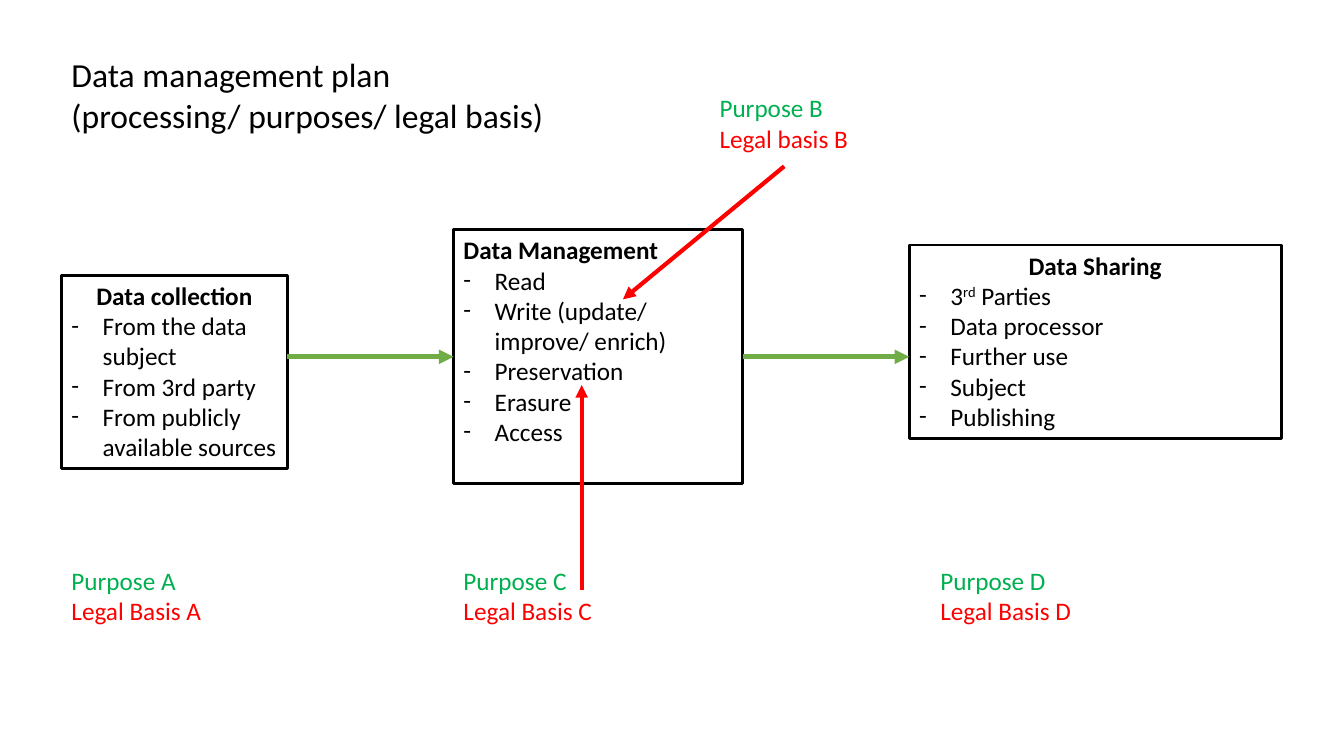
from lxml.etree import SubElement
from pptx import Presentation
from pptx.dml.color import RGBColor
from pptx.enum.shapes import MSO_CONNECTOR, MSO_SHAPE
from pptx.enum.text import MSO_ANCHOR, MSO_AUTO_SIZE, PP_ALIGN
from pptx.oxml.ns import qn
from pptx.util import Inches, Pt

BLACK, GREEN, RED, FLOW_GREEN = "000000", "00B050", "FF0000", "70AD47"

deck = Presentation()
deck.slide_width, deck.slide_height = Inches(13.33), Inches(7.5)
slide = deck.slides.add_slide(deck.slide_layouts[6])

# Grid of 100 columns by 100 rows
COL, ROW = deck.slide_width / 100, deck.slide_height / 100
MIDLINE = 47.2
LEFT, CENTRE, RIGHT = 4.58, 33.75, 67.65


def paint(color_format, value):
    color_format.rgb = RGBColor.from_string(value)


def write(frame, text, size=18, color=BLACK, bold=False, align=PP_ALIGN.LEFT, dash=False):
    """Add a paragraph; text between ^ marks is superscript, \\v breaks a line."""
    frame.word_wrap = True
    frame.auto_size = MSO_AUTO_SIZE.SHAPE_TO_FIT_TEXT
    frame.vertical_anchor = MSO_ANCHOR.TOP
    paragraph = frame.add_paragraph() if frame.text else frame.paragraphs[0]
    paragraph.alignment = align
    if dash:
        properties = paragraph._p.get_or_add_pPr()
        properties.set("marL", str(Inches(0.31)))
        properties.set("indent", str(-Inches(0.31)))
        SubElement(properties, qn("a:buFont"), typeface="Calibri")
        SubElement(properties, qn("a:buChar"), char="-")
    for line_number, line in enumerate(text.split("\v")):
        if line_number:
            paragraph.add_line_break()
        for part_number, part in enumerate(line.split("^")):
            run = paragraph.add_run()
            run.text = part
            run.font.name, run.font.size, run.font.bold = "Calibri", Pt(size), bold
            paint(run.font.color, color)
            if part_number % 2:
                run._r.get_or_add_rPr().set("baseline", "30000")


title = slide.shapes.add_textbox(LEFT * COL, 6.53 * ROW, 38.1 * COL, 12.13 * ROW)
write(title.text_frame, "Data management plan\v(processing/ purposes/ legal basis)", size=24)

# Stages: left, width, height, shift of the centre from the midline
stages = [
    (LEFT, 16.8, 25.6, 2, "Data collection", PP_ALIGN.CENTER,
     ["From the data subject", "From 3rd party", "From publicly available sources"]),
    (CENTRE, 21.53, 33.6, 0, "Data Management", PP_ALIGN.LEFT,
     ["Read", "Write (update/ improve/ enrich)", "Preservation", "Erasure", "Access"]),
    (RIGHT, 27.68, 25.6, -2, "Data Sharing", PP_ALIGN.CENTER,
     ["3^rd^ Parties", "Data processor", "Further use", "Subject", "Publishing"]),
]
for left, width, height, shift, heading, align, activities in stages:
    top = MIDLINE + shift - height / 2
    stage = slide.shapes.add_shape(
        MSO_SHAPE.RECTANGLE, left * COL, top * ROW, width * COL, height * ROW)
    stage.shadow.inherit = False
    stage.fill.background()
    paint(stage.line.color, BLACK)
    stage.line.width = Pt(2)
    write(stage.text_frame, heading, bold=True, align=align)
    for activity in activities:
        write(stage.text_frame, activity, dash=True)

# Purpose and legal basis of each step
for left, top, letter, basis in [
    (LEFT, 74.13, "Α", "Legal Basis"),
    (CENTRE, 74.13, "C", "Legal Basis"),
    (69.23, 74.13, "D", "Legal Basis"),
    (52.8, 11.6, "Β", "Legal basis"),
]:
    grounds = slide.shapes.add_textbox(left * COL, top * ROW, 19.05 * COL, 9.47 * ROW)
    write(grounds.text_frame, f"Purpose {letter}", color=GREEN)
    write(grounds.text_frame, f"{basis} {letter}", color=RED)

# Flow between neighbouring stages, then the pointers into data management
arrows = [
    (before[0] + before[1], MIDLINE, after[0], MIDLINE, FLOW_GREEN, 3.5)
    for before, after in zip(stages, stages[1:])
] + [
    (58.35, 22, 46.35, 39.6, RED, 3),
    (43.28, 78, 43.28, 50.93, RED, 3),
]
for x1, y1, x2, y2, color, weight in arrows:
    arrow = slide.shapes.add_connector(
        MSO_CONNECTOR.STRAIGHT, *(round(v) for v in (x1 * COL, y1 * ROW, x2 * COL, y2 * ROW)))
    paint(arrow.line.color, color)
    arrow.line.width = Pt(weight)
    SubElement(arrow.line._get_or_add_ln(), qn("a:tailEnd"), type="triangle")
    SubElement(arrow._element.spPr, qn("a:effectLst"))

deck.save("out.pptx")
